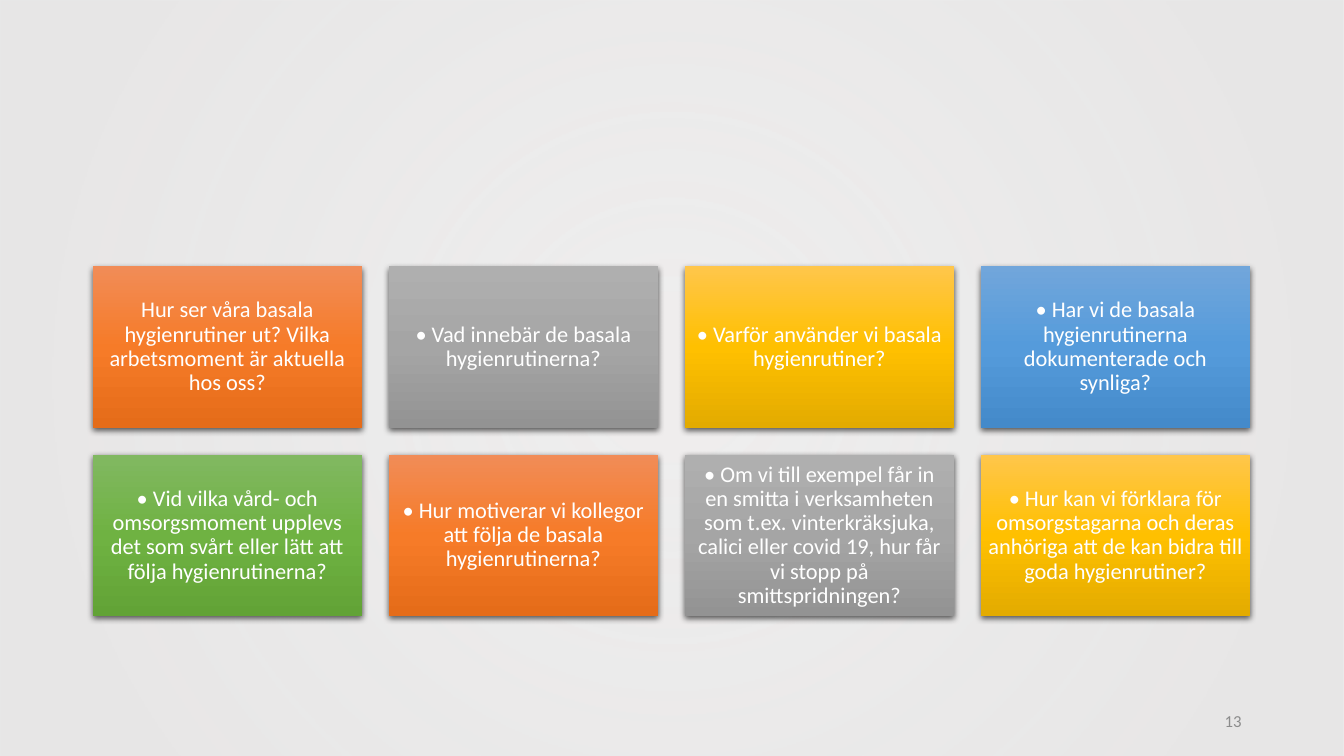
"""Build a slide with eight discussion questions about basic hygiene routines."""
from dataclasses import dataclass

from pptx import Presentation
from pptx.dml.color import RGBColor
from pptx.enum.shapes import MSO_SHAPE
from pptx.enum.text import MSO_ANCHOR, PP_ALIGN
from pptx.oxml import parse_xml
from pptx.oxml.ns import nsdecls
from pptx.util import Cm, Pt

QUESTIONS = [
    ("orange", "Hur ser våra basala hygienrutiner ut? Vilka arbetsmoment är aktuella hos oss?"),
    ("grey", "• Vad innebär de basala hygienrutinerna?"),
    ("gold", "• Varför använder vi basala hygienrutiner?"),
    ("blue", "• Har vi de basala hygienrutinerna dokumenterade och synliga?"),
    ("green", "• Vid vilka vård- och omsorgsmoment upplevs det som svårt eller lätt att följa hygienrutinerna?"),
    ("orange", "• Hur motiverar vi kollegor att följa de basala hygienrutinerna?"),
    ("grey", "• Om vi till exempel får in en smitta i verksamheten som t.ex. vinterkräksjuka, "
             "calici eller covid 19, hur får vi stopp på smittspridningen?"),
    ("gold", "• Hur kan vi förklara för omsorgstagarna och deras anhöriga att de kan bidra till "
             "goda hygienrutiner?"),
]
PAGE_NUMBER = "13"

PAGE_WIDTH, PAGE_HEIGHT = 33.87, 19.05
COLUMNS = 4
GRID_LEFT, GRID_TOP = 2.34, 6.71
TILE_WIDTH, TILE_HEIGHT, GAP = 6.78, 4.07, 0.68
TILE_INSET = 0.18


@dataclass(frozen=True)
class Theme:
    """Fonts, type sizes and colours of the slide."""
    font = "Calibri"
    question_size = 16
    number_size = 12
    question_color = "FFFFFF"
    number_color = "8C8C8C"
    backdrop = ((10, "E7E6E6", 68), (85, "E7E6E6", 97))
    tiles = {
        "orange": ("F18C57", "F67B28", "E56C19"),
        "grey": ("AFAFAF", "A5A5A5", "939393"),
        "gold": ("FFC64B", "FFC000", "E3AB00"),
        "blue": ("71A6DB", "559BDB", "448ACA"),
        "green": ("81B861", "6FB242", "62A336"),
    }


THEME = Theme()
LINEAR = '<a:lin ang="5400000" scaled="0"/>'
RADIAL = '<a:path path="circle"><a:fillToRect l="50000" t="50000" r="50000" b="50000"/></a:path>'
SHADOW = (
    f'<a:effectLst {nsdecls("a")}><a:outerShdw blurRad="57150" dist="19050" dir="5400000" '
    'algn="ctr" rotWithShape="0"><a:srgbClr val="000000"><a:alpha val="63000"/></a:srgbClr>'
    '</a:outerShdw></a:effectLst>'
)


def add_gradient_box(page, left, top, width, height, stops, direction):
    """Add a rectangle without outline, filled with (position, colour, opacity) stops."""
    box = page.shapes.add_shape(MSO_SHAPE.RECTANGLE, Cm(left), Cm(top), Cm(width), Cm(height))
    stop_xml = "".join(
        f'<a:gs pos="{position * 1000}"><a:srgbClr val="{color}">'
        f'<a:alpha val="{opacity * 1000}"/></a:srgbClr></a:gs>'
        for position, color, opacity in stops
    )
    properties = box.fill._xPr
    properties.insert(2, parse_xml(
        f'<a:gradFill {nsdecls("a")} rotWithShape="1"><a:gsLst>{stop_xml}</a:gsLst>'
        f'{direction}</a:gradFill>'
    ))
    box.line.fill.background()
    box.shadow.inherit = False
    return box


def write_text(box, text, size, color, alignment):
    """Put one vertically centred paragraph into a box."""
    frame = box.text_frame
    frame.word_wrap = True
    frame.vertical_anchor = MSO_ANCHOR.MIDDLE
    frame.text = text
    para = frame.paragraphs[0]
    para.alignment = alignment
    span = para.runs[0]
    span.font.name = THEME.font
    span.font.size = Pt(size)
    span.font.color.rgb = RGBColor.from_string(color)
    return frame


def add_question(page, index, color_name, question):
    """Place a question tile in its cell of the grid."""
    row, column = divmod(index, COLUMNS)
    left = GRID_LEFT + column * (TILE_WIDTH + GAP)
    top = GRID_TOP + row * (TILE_HEIGHT + GAP)
    stops = [(50 * step, color, 100) for step, color in enumerate(THEME.tiles[color_name])]
    tile = add_gradient_box(page, left, top, TILE_WIDTH, TILE_HEIGHT, stops, LINEAR)
    properties = tile.fill._xPr
    properties.replace(properties[-1], parse_xml(SHADOW))
    frame = write_text(tile, question, THEME.question_size, THEME.question_color, PP_ALIGN.CENTER)
    frame.margin_left = frame.margin_right = Cm(TILE_INSET)
    frame.margin_top = frame.margin_bottom = Cm(TILE_INSET)
    frame.paragraphs[0].line_spacing = 0.9


def main():
    """Build and save the deck."""
    deck = Presentation()
    deck.slide_width, deck.slide_height = Cm(PAGE_WIDTH), Cm(PAGE_HEIGHT)
    page = deck.slides.add_slide(deck.slide_layouts[6])
    add_gradient_box(page, 0, 0, PAGE_WIDTH, PAGE_HEIGHT, THEME.backdrop, RADIAL)
    number_box = page.shapes.add_textbox(Cm(23.92), Cm(17.66), Cm(7.62), Cm(1.01))
    write_text(number_box, PAGE_NUMBER, THEME.number_size, THEME.number_color, PP_ALIGN.RIGHT)
    for index, (color_name, question) in enumerate(QUESTIONS):
        add_question(page, index, color_name, question)
    deck.save("out.pptx")


if __name__ == "__main__":
    main()
